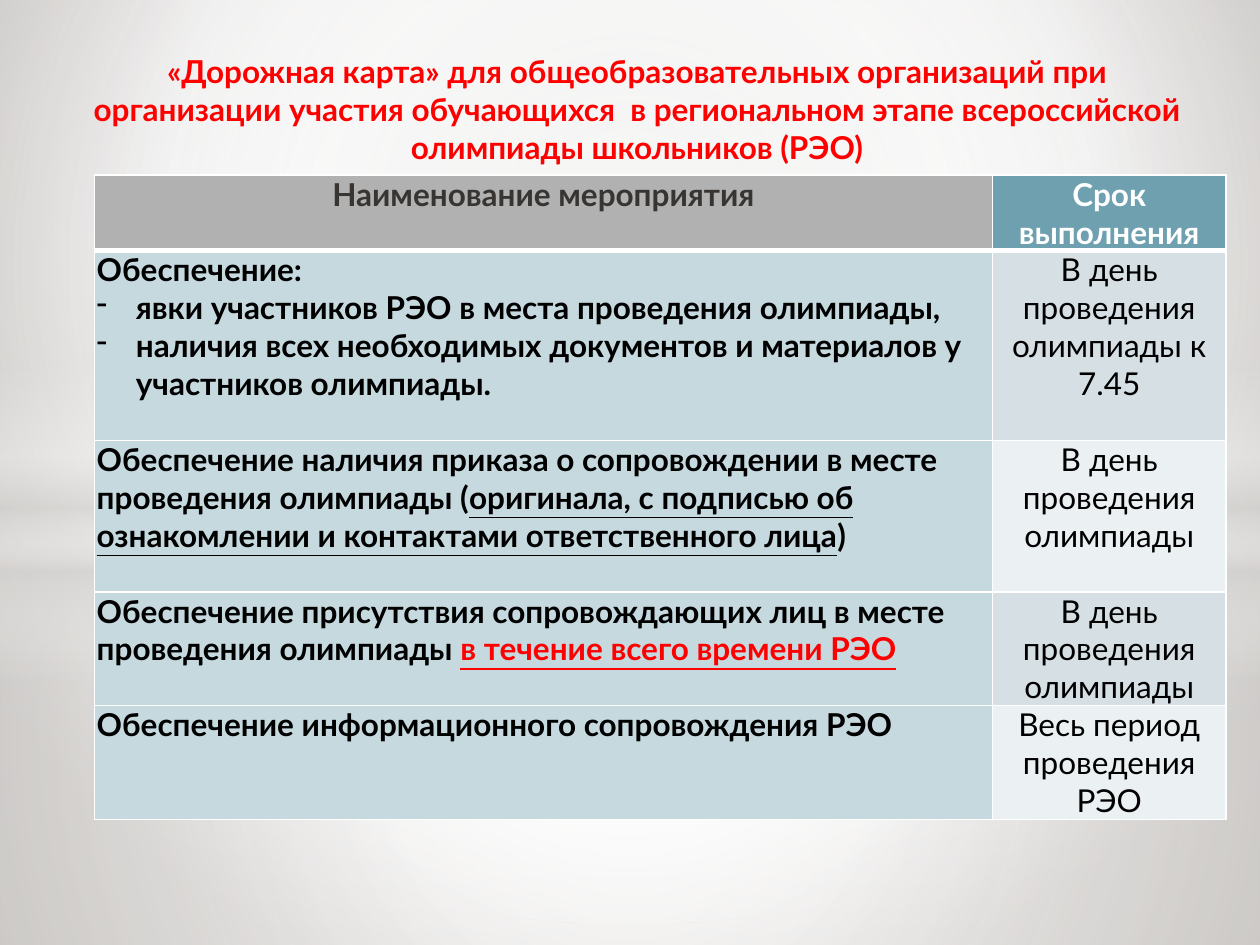
from dataclasses import dataclass

from lxml import etree
from pptx import Presentation
from pptx.dml.color import RGBColor
from pptx.enum.shapes import MSO_SHAPE
from pptx.enum.text import MSO_ANCHOR, PP_ALIGN
from pptx.oxml.ns import qn
from pptx.util import Cm, Pt

CENTER, LEFT = PP_ALIGN.CENTER, PP_ALIGN.LEFT
TOP = MSO_ANCHOR.TOP
RECTANGLE, OVAL = MSO_SHAPE.RECTANGLE, MSO_SHAPE.OVAL


@dataclass(frozen=True)
class Theme:
    font: str = "Lato"
    size: int = 18
    accent: str = "FF0000"
    text: str = "000000"
    header_text: tuple = ("373432", "FFFFFF")
    header_fill: tuple = ("B1B1B1", "6EA0B0")
    activity_fill: str = "C5D9DF"
    deadline_fills: tuple = ("D5DFE4", "EBF0F2")
    border: str = "FFFFFF"
    thin: int = 1
    thick: int = 3


THEME = Theme()

TITLE = ("«Дорожная карта» для общеобразовательных организаций при организации "
         "участия обучающихся  в региональном этапе всероссийской олимпиады "
         "школьников (РЭО)")
HEADERS = ("Наименование мероприятия", "Срок выполнения")

# Each activity is a list of paragraphs, each paragraph a list of (text, style).
PLAIN, UNDERLINED, ALERT, BULLET = "plain", "underlined", "alert", "bullet"
ROWS = [
    ([[("Обеспечение:", PLAIN)],
      [("явки участников РЭО в места проведения олимпиады,", BULLET)],
      [("наличия всех необходимых документов и материалов у участников олимпиады.",
        BULLET)]],
     "В день проведения олимпиады к 7.45"),
    ([[("Обеспечение наличия приказа о сопровождении в месте проведения олимпиады (",
        PLAIN),
       ("оригинала, с подписью об ознакомлении и контактами ответственного лица",
        UNDERLINED),
       (")", PLAIN)]],
     "В день проведения олимпиады"),
    ([[("Обеспечение присутствия сопровождающих лиц в месте проведения олимпиады ",
        PLAIN),
       ("в течение всего времени РЭО", ALERT)]],
     "В день проведения олимпиады"),
    ([[("Обеспечение информационного сопровождения РЭО", PLAIN)]],
     "Весь период проведения РЭО"),
]
COLUMN_WIDTHS = (18.11, 4.7)
ROW_HEIGHTS = (1.5, 3.83, 3.05, 2.29, 2.29)

# Gradient stops are (position %, colour, opacity %).
BACKDROP = [(0, "CDCAC7", 100), (60, "FFFFFF", 100), (100, "AFA9A4", 100)]
CENTERED = (50, 50, 50, 50)
LAYERS = [  # shape, (left, top, width, height) in cm, stops, focus
    (RECTANGLE, (0, 10.74, 25.4, 8.31),
     [(0, "FFFFFF", 91), (37, "FFFFFF", 76), (100, "D4D2D0", 79)], CENTERED),
    (RECTANGLE, (0, 0, 25.4, 10.74),
     [(0, "FFFFFF", 89), (48, "FFFFFF", 62), (100, "D4D2D0", 79)], CENTERED),
    (RECTANGLE, (0, 7.37, 25.4, 6.35),
     [(0, "FFFFFF", 0), (29, "FFFFFF", 30), (45, "D4D2D0", 40),
      (55, "FFFFFF", 26), (65, "D4D2D0", 60), (100, "FFFFFF", 0)], None),
    (OVAL, (0, 4.45, 25.4, 14.17),
     [(0, "FFFFFF", 100), (54, "FFFFFF", 0)], CENTERED),
]


def add_child(parent, tag, **attributes):
    child = etree.SubElement(parent, qn(tag))
    for name, value in attributes.items():
        child.set(name, str(value))
    return child


def paint_gradient(fill, owner, stops, focus):
    """Fill radially around the focus insets, or top to bottom without a focus."""
    fill.gradient()
    gradient = next(owner.iter(qn("a:gradFill")))
    for child in list(gradient):
        gradient.remove(child)
    stop_list = add_child(gradient, "a:gsLst")
    for position, color, opacity in stops:
        stop = add_child(stop_list, "a:gs", pos=position * 1000)
        color_node = add_child(stop, "a:srgbClr", val=color)
        if opacity < 100:
            add_child(color_node, "a:alpha", val=opacity * 1000)
    if focus:
        radial = add_child(gradient, "a:path", path="circle")
        insets = {side: value * 1000 for side, value in zip("ltrb", focus)}
        add_child(radial, "a:fillToRect", **insets)
    else:
        add_child(gradient, "a:lin", ang=90 * 60000, scaled=0)


def style_font(font, color, bold=True, underline=None):
    font.name = THEME.font
    font.size = Pt(THEME.size)
    font.bold = bold
    font.underline = underline
    font.color.rgb = RGBColor.from_string(color)


def add_backdrop(slide):
    paint_gradient(slide.background.fill, slide.element, BACKDROP, (20, 10, 20, 60))
    for kind, box, stops, focus in LAYERS:
        shape = slide.shapes.add_shape(kind, *map(Cm, box))
        shape.shadow.inherit = False
        shape.line.fill.background()
        paint_gradient(shape.fill, shape.element, stops, focus)


def add_title(slide):
    title = slide.shapes.title
    title.element.getparent().append(title.element)  # in front of the backdrop
    title.left, title.top, title.width, title.height = map(Cm, (0.9, 0.92, 23.4, 2.4))
    frame = title.text_frame
    frame.text = TITLE
    frame.word_wrap = True
    frame.vertical_anchor = TOP
    frame.margin_left = Cm(0.74)
    paragraph = frame.paragraphs[0]
    paragraph.alignment = CENTER
    style_font(paragraph.font, THEME.accent)


def set_borders(cell, row):
    properties = cell._tc.get_or_add_tcPr()
    widths = {"L": THEME.thin, "R": THEME.thin,
              "T": THEME.thick if row == 1 else THEME.thin,
              "B": THEME.thick if row == 0 else THEME.thin}
    for side, width in widths.items():
        line = add_child(properties, f"a:ln{side}", w=Pt(width))
        add_child(add_child(line, "a:solidFill"), "a:srgbClr", val=THEME.border)


def set_bullet(paragraph):
    properties = paragraph._p.get_or_add_pPr()
    properties.set("marL", str(Cm(0.79)))
    properties.set("indent", str(-Cm(0.79)))
    add_child(properties, "a:buChar", char="-")


def fill_cell(cell, row, paragraphs, fill, color, alignment, bold):
    set_borders(cell, row)
    cell.fill.solid()
    cell.fill.fore_color.rgb = RGBColor.from_string(fill)
    cell.margin_left = cell.margin_right = Cm(0.05)
    cell.margin_top = cell.margin_bottom = 0
    frame = cell.text_frame
    for index, runs in enumerate(paragraphs):
        paragraph = frame.add_paragraph() if index else frame.paragraphs[0]
        paragraph.alignment = alignment
        for text, style in runs:
            run = paragraph.add_run()
            run.text = text
            style_font(run.font, THEME.accent if style == ALERT else color, bold,
                       style in (UNDERLINED, ALERT))
        if runs[0][1] == BULLET:
            set_bullet(paragraph)


def add_roadmap(slide):
    table = slide.shapes.add_table(
        len(ROW_HEIGHTS), len(COLUMN_WIDTHS), Cm(1.9), Cm(3.53),
        Cm(sum(COLUMN_WIDTHS)), Cm(sum(ROW_HEIGHTS))).table
    for column, width in zip(table.columns, COLUMN_WIDTHS):
        column.width = Cm(width)
    for row, height in zip(table.rows, ROW_HEIGHTS):
        row.height = Cm(height)
    for column, text in enumerate(HEADERS):
        fill_cell(table.cell(0, column), 0, [[(text, PLAIN)]],
                  THEME.header_fill[column], THEME.header_text[column], CENTER, True)
    for row, (activity, deadline) in enumerate(ROWS, start=1):
        fill_cell(table.cell(row, 0), row, activity,
                  THEME.activity_fill, THEME.text, LEFT, True)
        fill_cell(table.cell(row, 1), row, [[(deadline, PLAIN)]],
                  THEME.deadline_fills[(row - 1) % 2], THEME.text, CENTER, False)


def main():
    presentation = Presentation()
    presentation.slide_width, presentation.slide_height = Cm(25.4), Cm(19.05)
    slide = presentation.slides.add_slide(presentation.slide_layouts[5])
    add_backdrop(slide)
    add_title(slide)
    add_roadmap(slide)
    presentation.save("out.pptx")


if __name__ == "__main__":
    main()
